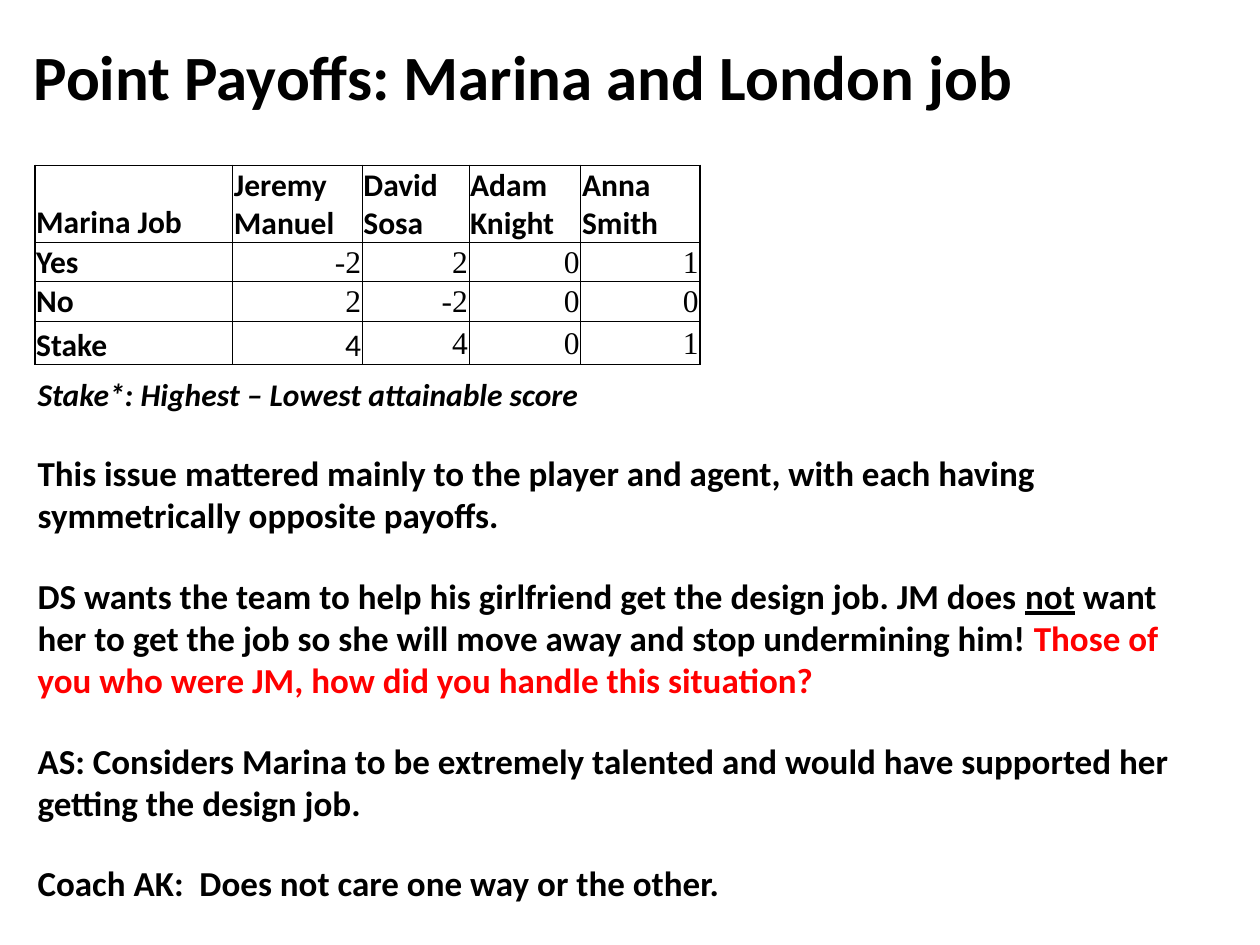
from lxml import etree
from pptx import Presentation
from pptx.dml.color import RGBColor
from pptx.enum.text import MSO_ANCHOR, PP_ALIGN
from pptx.oxml.ns import qn
from pptx.util import Pt

BLACK = RGBColor(0, 0, 0)
RED = RGBColor(0xFF, 0, 0)
MIDDLE, BOTTOM = MSO_ANCHOR.MIDDLE, MSO_ANCHOR.BOTTOM
LEFT, CENTER, RIGHT = PP_ALIGN.LEFT, PP_ALIGN.CENTER, PP_ALIGN.RIGHT
SANS, SERIF = "Calibri", "Times New Roman"


def add_run(p, text, size, font=SANS, bold=True, color=BLACK):
    r = p.add_run()
    r.text = text
    r.font.name = font
    r.font.size = Pt(size)
    r.font.bold = bold
    r.font.color.rgb = color
    return r


def add_border(cell, side, width):
    ln = etree.SubElement(cell._tc.get_or_add_tcPr(), qn(f"a:ln{side}"), w=str(Pt(width)))
    fill = etree.SubElement(ln, qn("a:solidFill"))
    etree.SubElement(fill, qn("a:srgbClr"), val=str(BLACK))


prs = Presentation()
prs.slide_width, prs.slide_height = Pt(720), Pt(540)
s = prs.slides.add_slide(prs.slide_layouts[5])

# Title
title = s.shapes.title
title.left, title.top, title.width, title.height = Pt(-25), Pt(-2), Pt(648), Pt(90)
tf = title.text_frame
tf.vertical_anchor = MIDDLE
p = tf.paragraphs[0]
p.alignment = CENTER
add_run(p, "Point Payoffs: Marina and London job", 36)

# Explanation
sp = s.shapes.add_textbox(Pt(14.4), Pt(304), Pt(674.6), Pt(215))
tf = sp.text_frame
tf.word_wrap = True
tf.vertical_anchor = MIDDLE
tf.margin_bottom = Pt(52)
paragraphs = [
    [("This issue mattered mainly to the player and agent, with each having "
      "symmetrically opposite payoffs.", BLACK, False)],
    [("DS wants the team to help his girlfriend get the design job. JM does ", BLACK, False),
     ("not", BLACK, True),
     (" want her to get the job so she will move away and stop undermining him! ", BLACK, False),
     ("Those of you who were JM, how did you handle this situation?", RED, False)],
    [("AS: Considers Marina to be extremely talented and would have supported her "
      "getting the design job.", BLACK, False)],
    [("Coach AK:  Does not care one way or the other.", BLACK, False)],
]
for i, runs in enumerate(paragraphs):
    p = tf.add_paragraph() if i else tf.paragraphs[0]
    p.space_before = Pt(22 if i else 0)
    for text, color, underline in runs:
        r = add_run(p, text, 20, color=color)
        r.font.underline = underline

# Payoff table
rows = [
    ["Marina Job", "Jeremy Manuel", "David Sosa", "Adam Knight", "Anna Smith"],
    ["Yes", "-2", "2", "0", "1"],
    ["No", "2", "-2", "0", "0"],
    ["Stake", "4", "4", "0", "1"],
]
col_widths = [113, 74, 61, 64, 68]
row_heights = [44, 22.5, 22.5, 25]
last_row, last_col = len(rows) - 1, len(col_widths) - 1
table = s.shapes.add_table(len(rows), len(col_widths), Pt(20), Pt(94.5),
                           Pt(sum(col_widths)), Pt(sum(row_heights))).table
table.first_row = table.horz_banding = False
for col, width in zip(table.columns, col_widths):
    col.width = Pt(width)
for i, row in enumerate(rows):
    table.rows[i].height = Pt(row_heights[i])
    for j, text in enumerate(row):
        cell = table.cell(i, j)
        is_label = i == 0 or j == 0
        is_stake = (i, j) == (last_row, 1)
        cell.margin_left = cell.margin_right = cell.margin_top = Pt(0.7)
        cell.margin_bottom = 0
        cell.vertical_anchor = BOTTOM if is_label or is_stake else MIDDLE
        p = cell.text_frame.paragraphs[0]
        p.alignment = LEFT if is_label else RIGHT
        add_run(p, text, 18, SANS if is_label or is_stake else SERIF, is_label)
        # Heavier lines around the table and after the label column
        add_border(cell, "L", 1 if j <= 1 else 0.5)
        add_border(cell, "R", 1 if j in (0, last_col) else 0.5)
        add_border(cell, "T", 1 if i == 0 else 0.5)
        add_border(cell, "B", 1 if i == last_row else 0.5)
        cell.fill.background()

# Table footnote
sp = s.shapes.add_textbox(Pt(14.4), Pt(180), Pt(366), Pt(90))
tf = sp.text_frame
tf.word_wrap = True
tf.vertical_anchor = MIDDLE
r = add_run(tf.paragraphs[0], "Stake*: Highest – Lowest attainable score", 18)
r.font.italic = True

prs.save("out.pptx")
